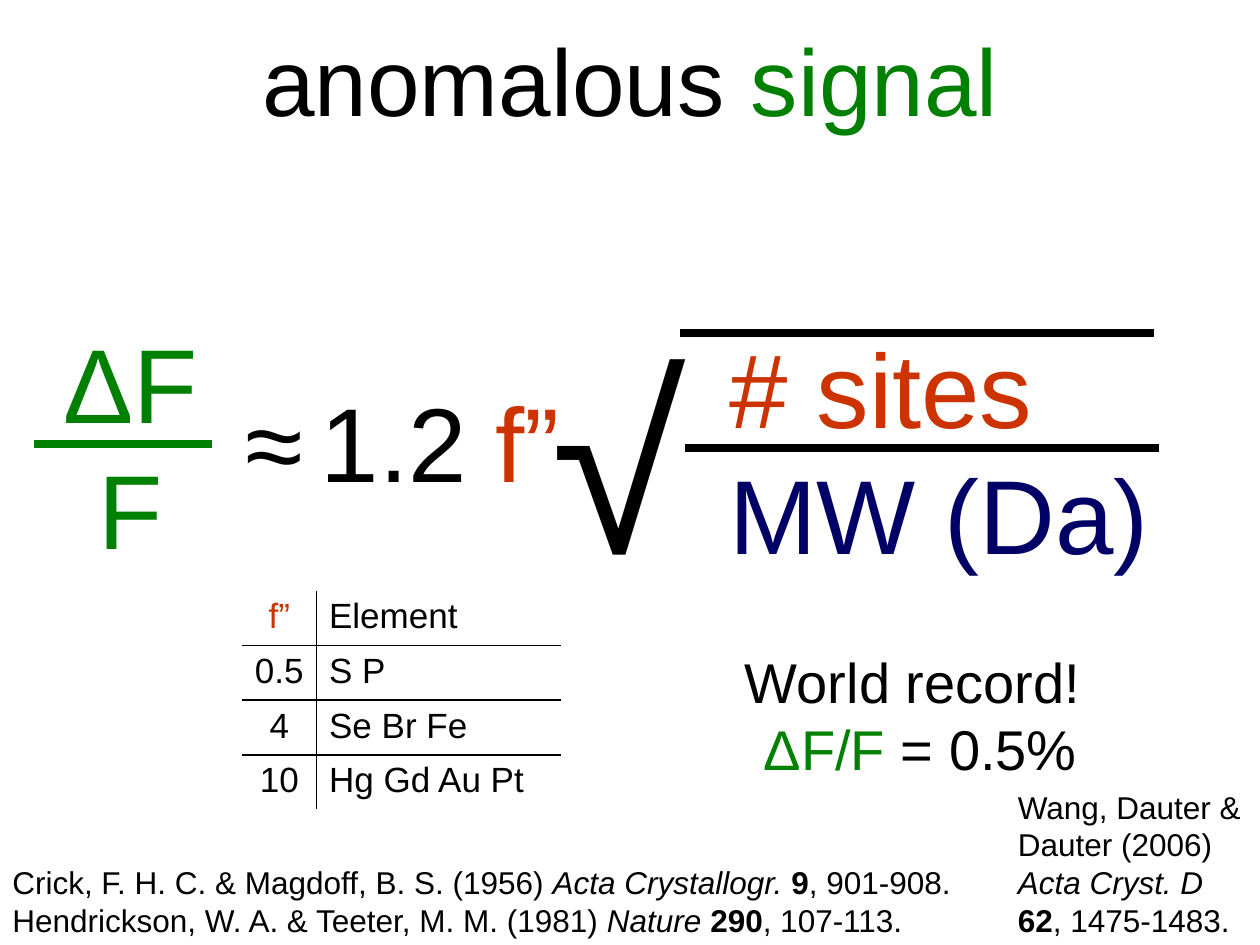
from lxml import etree
from pptx import Presentation
from pptx.dml.color import RGBColor
from pptx.enum.shapes import MSO_CONNECTOR
from pptx.enum.text import MSO_ANCHOR, MSO_AUTO_SIZE, PP_ALIGN
from pptx.oxml import parse_xml
from pptx.oxml.ns import nsdecls, qn
from pptx.util import Cm, Pt

STRAIGHT = MSO_CONNECTOR.STRAIGHT
TOP, MIDDLE = MSO_ANCHOR.TOP, MSO_ANCHOR.MIDDLE
LEFT, CENTER = PP_ALIGN.LEFT, PP_ALIGN.CENTER
GROW, FIXED = MSO_AUTO_SIZE.SHAPE_TO_FIT_TEXT, MSO_AUTO_SIZE.NONE

COLORS = {"ink": "000000", "signal": "008000", "sites": "CC3300", "weight": "000066"}
FONT = "Arial"
ITALIC, BOLD = {"italic": True}, {"bold": True}


def tint(name):
    """Format values for a run in a named colour."""
    return {"color": name}


def fill_para(para, spans, size, align=LEFT):
    """Write (text, format) spans into a paragraph."""
    para.alignment = align
    for text, extra in spans:
        span = para.add_run()
        span.text = text
        values = {"name": FONT, "size": size, "color": "ink", **extra}
        span.font.color.rgb = RGBColor.from_string(COLORS[values.pop("color")])
        values["size"] = Pt(values["size"])
        for key, value in values.items():
            setattr(span.font, key, value)


def add_text(page, box, lines, size, align=LEFT, anchor=TOP, wrap=False, auto=GROW):
    """Place a text box; lines is a list of span lists."""
    frame = page.shapes.add_textbox(*map(Cm, box)).text_frame
    settings = {"word_wrap": wrap, "auto_size": auto, "vertical_anchor": anchor}
    for key, value in settings.items():
        setattr(frame, key, value)
    for index, spans in enumerate(lines):
        para = frame.add_paragraph() if index else frame.paragraphs[0]
        fill_para(para, spans, size, align)


def add_bar(page, left, top, width, color):
    """Draw a horizontal fraction bar or overline."""
    bar = page.shapes.add_connector(
        STRAIGHT, Cm(left), Cm(top), Cm(left + width), Cm(top))
    bar.line.color.rgb = RGBColor.from_string(COLORS[color])
    bar.line.width = Pt(4.5)
    etree.SubElement(bar._element.spPr, qn("a:effectLst"))


def add_title(page, box):
    spans = [("anomalous ", {}), ("signal", tint("signal"))]
    add_text(page, box, [spans], 54, CENTER, MIDDLE, wrap=True, auto=FIXED)


def add_signal_ratio(page, box):
    """Green fraction on the left of the formula."""
    left, top, width, height = box
    add_text(page, (left + 0.33, top, 3.23, height),
             [[("ΔF", tint("signal"))], [("F", tint("signal"))]], 60, CENTER)
    add_bar(page, left, top + height / 2, width, "signal")


def add_factor(page, box):
    """Constant and scattering factor, kept on one line."""
    spans = [("≈", {}), (" ", {"size": 36}), ("1.2 ", {}), ("f”", tint("sites"))]
    add_text(page, box, [spans], 60)


def add_root(page, box):
    """Root sign with the fraction of sites over weight."""
    left, top, width, height = box
    add_text(page, (left + 3.58, top + 0.3, 8.97, 5.33),
             [[("# sites", tint("sites"))], [("MW (Da)", tint("weight"))]], 60)
    add_text(page, (left, top, 2.84, height), [[("√", {})]], 140, wrap=True)
    bar_width = 9.56
    add_bar(page, left + width - bar_width, top + 2.94, bar_width, "ink")
    add_bar(page, left + width - bar_width - 0.1, top + 0.61, bar_width, "ink")


def add_borders(cell, sides):
    """Rule the given sides (of L, R, T, B) and clear the others."""
    properties = cell._tc.get_or_add_tcPr()
    for index, side in enumerate("LRTB"):
        if side in sides:
            fill = f'<a:solidFill><a:srgbClr val="{COLORS["ink"]}"/></a:solidFill>'
        else:
            fill = "<a:noFill/>"
        properties.insert(index, parse_xml(
            f'<a:ln{side} {nsdecls("a")} w="{Pt(1)}">{fill}</a:ln{side}>'))


def add_element_table(page, box):
    rows = [("f”", "Element"), ("0.5", "S P"), ("4", "Se Br Fe"), ("10", "Hg Gd Au Pt")]
    table = page.shapes.add_table(len(rows), 2, *map(Cm, box)).table
    table.first_row = table.horz_banding = False
    for column, width in zip(table.columns, (1.5, box[2] - 1.5)):
        column.width = Cm(width)
    for row_index, texts in enumerate(rows):
        for column_index, text in enumerate(texts):
            cell = table.cell(row_index, column_index)
            cell.fill.background()
            # Inner rules only
            sides = "L" if column_index else "R"
            sides += "T" if row_index else ""
            sides += "B" if row_index < len(rows) - 1 else ""
            add_borders(cell, sides)
            color = "sites" if text == "f”" else "ink"
            fill_para(cell.text_frame.paragraphs[0], [(text, tint(color))], 20,
                      LEFT if column_index else CENTER)


def add_record(page, box):
    lines = [[("World record! ", {})], [("ΔF/F", tint("signal")), (" = 0.5%", {})]]
    add_text(page, box, lines, 32, CENTER)


def add_citations(page, box, citations, anchor=TOP):
    """Authors, italic journal, bold volume and pages."""
    lines = [[(authors, {}), (journal, ITALIC), (volume, BOLD), (pages, {})]
             for authors, journal, volume, pages in citations]
    add_text(page, box, lines, 18, anchor=anchor, wrap=True)


def main():
    deck = Presentation()
    deck.slide_width, deck.slide_height = Cm(25.4), Cm(19.05)
    page = deck.slides.add_slide(deck.slide_layouts[6])

    add_title(page, (1.9, 0, 21.6, 3.18))
    # Formula
    add_signal_ratio(page, (0.69, 6.3, 3.58, 5.3))
    add_factor(page, (4.7, 7.49, 7, 2.79))
    add_root(page, (10.87, 6.1, 12.5, 6.17))
    # Values and record
    add_element_table(page, (4.88, 11.91, 6.43, 4.4))
    add_record(page, (14.76, 12.93, 7.59, 2.97))
    # Sources
    add_citations(page, (0, 17.27, 25.4, 1.78), [
        ("Crick, F. H. C. & Magdoff, B. S. (1956) ", "Acta Crystallogr. ",
         "9", ", 901-908."),
        ("Hendrickson, W. A. & Teeter, M. M. (1981) ", "Nature ",
         "290", ", 107-113."),
    ])
    add_citations(page, (20.27, 15.75, 5.13, 3.3), [
        ("Wang, Dauter & Dauter (2006) ", "Acta Cryst. D ", "62", ", 1475-1483."),
    ], MIDDLE)
    deck.save("out.pptx")


if __name__ == "__main__":
    main()
